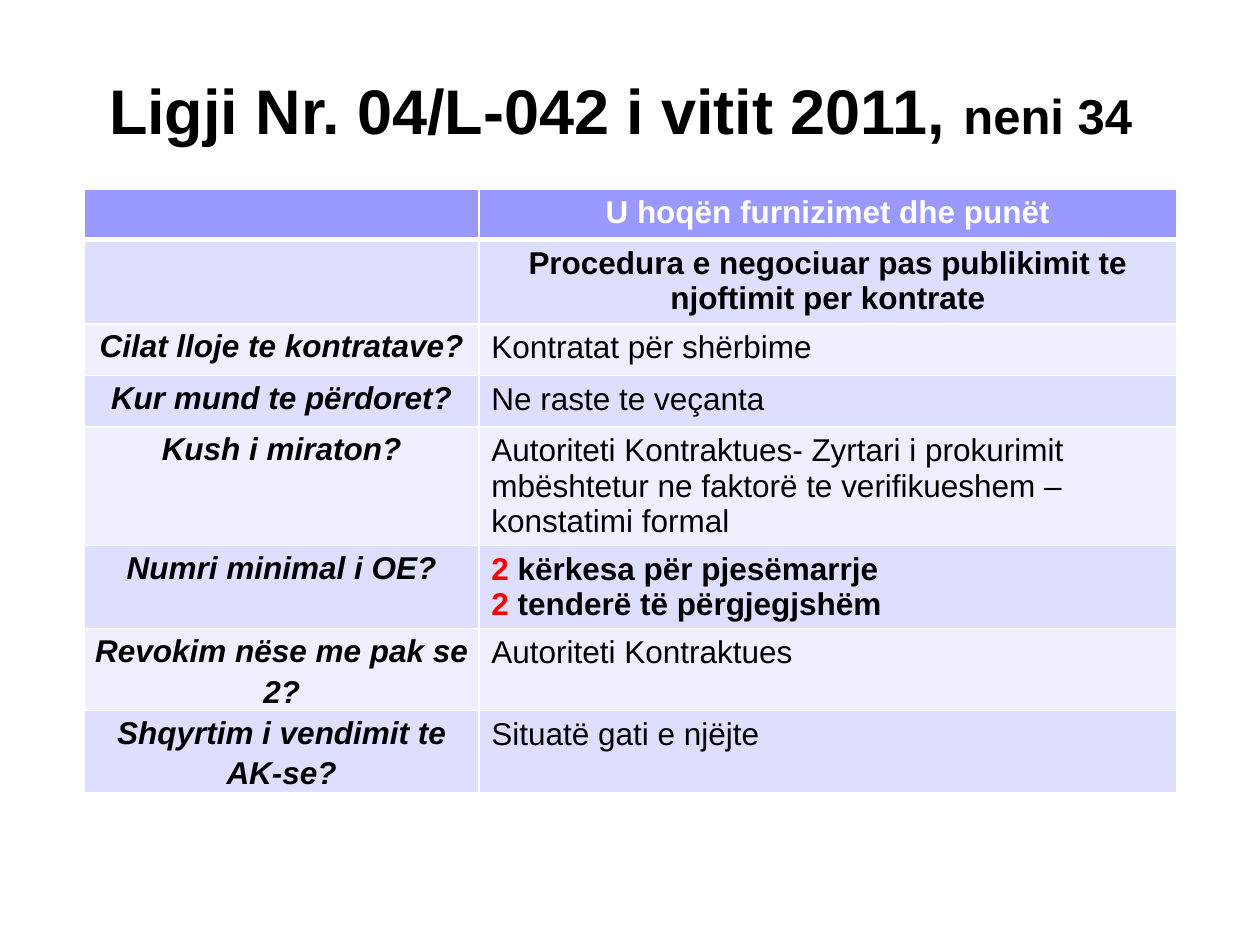
from dataclasses import dataclass

from lxml import etree
from pptx import Presentation
from pptx.dml.color import RGBColor
from pptx.enum.text import MSO_ANCHOR, MSO_AUTO_SIZE, PP_ALIGN
from pptx.oxml.ns import qn
from pptx.util import Inches, Pt

CENTER, LEFT = PP_ALIGN.CENTER, PP_ALIGN.LEFT
TOP = MSO_ANCHOR.TOP
NO_AUTOFIT = MSO_AUTO_SIZE.NONE
TITLE_ONLY = 5


@dataclass(frozen=True)
class Theme:
    font: str = "Arial"
    ink: str = "000000"
    paper: str = "FFFFFF"
    accent: str = "FF0000"
    header: str = "9999FF"
    bands: tuple = ("DEDEFF", "EFEFFF")
    title_size: int = 36
    article_size: int = 28
    body_size: int = 18


THEME = Theme()
HEADING = "U hoqën furnizimet dhe punët"
PROCEDURE = "Procedura e negociuar pas publikimit te njoftimit per kontrate"
MINIMUM_COUNTS = [("2", " kërkesa për pjesëmarrje"), ("2", " tenderë të përgjegjshëm")]
QUESTIONS = [
    ("Cilat lloje te kontratave?", "Kontratat për shërbime"),
    ("Kur mund te përdoret?", "Ne raste te veçanta"),
    ("Kush i miraton?", "Autoriteti Kontraktues- Zyrtari i prokurimit mbështetur ne "
                        "faktorë te verifikueshem –konstatimi formal"),
    ("Numri minimal i OE?", MINIMUM_COUNTS),
    ("Revokim nëse me pak se 2?", "Autoriteti Kontraktues"),
    ("Shqyrtim i vendimit te AK-se?", "Situatë gati e njëjte"),
]
COLUMN_WIDTHS = [3.13, 5.54]
ROW_HEIGHTS = [0.4, 0.67, 0.41, 0.41, 0.94, 0.66, 0.65, 0.65]


def style_para(para, size, color=THEME.ink, bold=False, italic=False, align=LEFT):
    para.alignment = align
    font = para.font
    font.name, font.size, font.bold, font.italic = THEME.font, Pt(size), bold, italic
    font.color.rgb = RGBColor.from_string(color)


def set_borders(cell, bottom_width):
    properties = cell._tc.get_or_add_tcPr()
    widths = {"a:lnL": 1, "a:lnR": 1, "a:lnT": 1, "a:lnB": bottom_width}
    for position, (tag, width) in enumerate(widths.items()):
        line = etree.Element(qn(tag), w=str(Pt(width)))
        fill = etree.SubElement(line, qn("a:solidFill"))
        etree.SubElement(fill, qn("a:srgbClr"), val=THEME.paper)
        properties.insert(position, line)


def format_cell(cell, fill, bottom_width=1):
    cell.fill.solid()
    cell.fill.fore_color.rgb = RGBColor.from_string(fill)
    set_borders(cell, bottom_width)


def write_cell(cell, text, **style):
    para = cell.text_frame.paragraphs[0]
    para.text = text
    style_para(para, THEME.body_size, **style)
    return para


def write_question(cell, question):
    cell.margin_left = cell.margin_right = Inches(0.07)
    cell.margin_top = cell.margin_bottom = 0
    para = write_cell(cell, question, bold=True, italic=True, align=CENTER)
    para.line_spacing = 1.15


def write_counts(cell, counts):
    frame = cell.text_frame
    for index, (number, label) in enumerate(counts):
        para = frame.add_paragraph() if index else frame.paragraphs[0]
        style_para(para, THEME.body_size, bold=True)
        span = para.add_run()
        span.text = number
        span.font.color.rgb = RGBColor.from_string(THEME.accent)
        para.add_run().text = label


def add_title(page, left, top, width, height):
    box = page.shapes.title
    box.left, box.top, box.width, box.height = map(Inches, (left, top, width, height))
    frame = box.text_frame
    frame.auto_size = NO_AUTOFIT
    frame.vertical_anchor = TOP
    para = frame.paragraphs[0]
    style_para(para, THEME.title_size, bold=True, align=CENTER)
    para.add_run().text = "Ligji Nr. 04/L-042 i vitit 2011, "
    article = para.add_run()
    article.text = "neni 34"
    article.font.size = Pt(THEME.article_size)


def add_procedure_table(page, left, top):
    table = page.shapes.add_table(
        len(ROW_HEIGHTS), len(COLUMN_WIDTHS), Inches(left), Inches(top),
        Inches(sum(COLUMN_WIDTHS)), Inches(sum(ROW_HEIGHTS))).table
    table.horz_banding = False
    for column, width in zip(table.columns, COLUMN_WIDTHS):
        column.width = Inches(width)
    for index, (row, height) in enumerate(zip(table.rows, ROW_HEIGHTS)):
        row.height = Inches(height)
        fill = THEME.bands[(index - 1) % 2] if index else THEME.header
        for cell in row.cells:
            format_cell(cell, fill, 1 if index else 3)

    for index, (text, color) in enumerate([(HEADING, THEME.paper), (PROCEDURE, THEME.ink)]):
        write_cell(table.cell(index, 0), "")
        write_cell(table.cell(index, 1), text, color=color, bold=True, align=CENTER)
    for index, (question, answer) in enumerate(QUESTIONS, start=2):
        write_question(table.cell(index, 0), question)
        write_answer = write_cell if isinstance(answer, str) else write_counts
        write_answer(table.cell(index, 1), answer)


def main():
    deck = Presentation()
    deck.slide_width, deck.slide_height = Inches(10), Inches(7.5)
    page = deck.slides.add_slide(deck.slide_layouts[TITLE_ONLY])
    add_title(page, 0.51, 0.52, 8.83, 1.01)
    add_procedure_table(page, 0.67, 1.5)
    deck.save("out.pptx")


if __name__ == "__main__":
    main()
